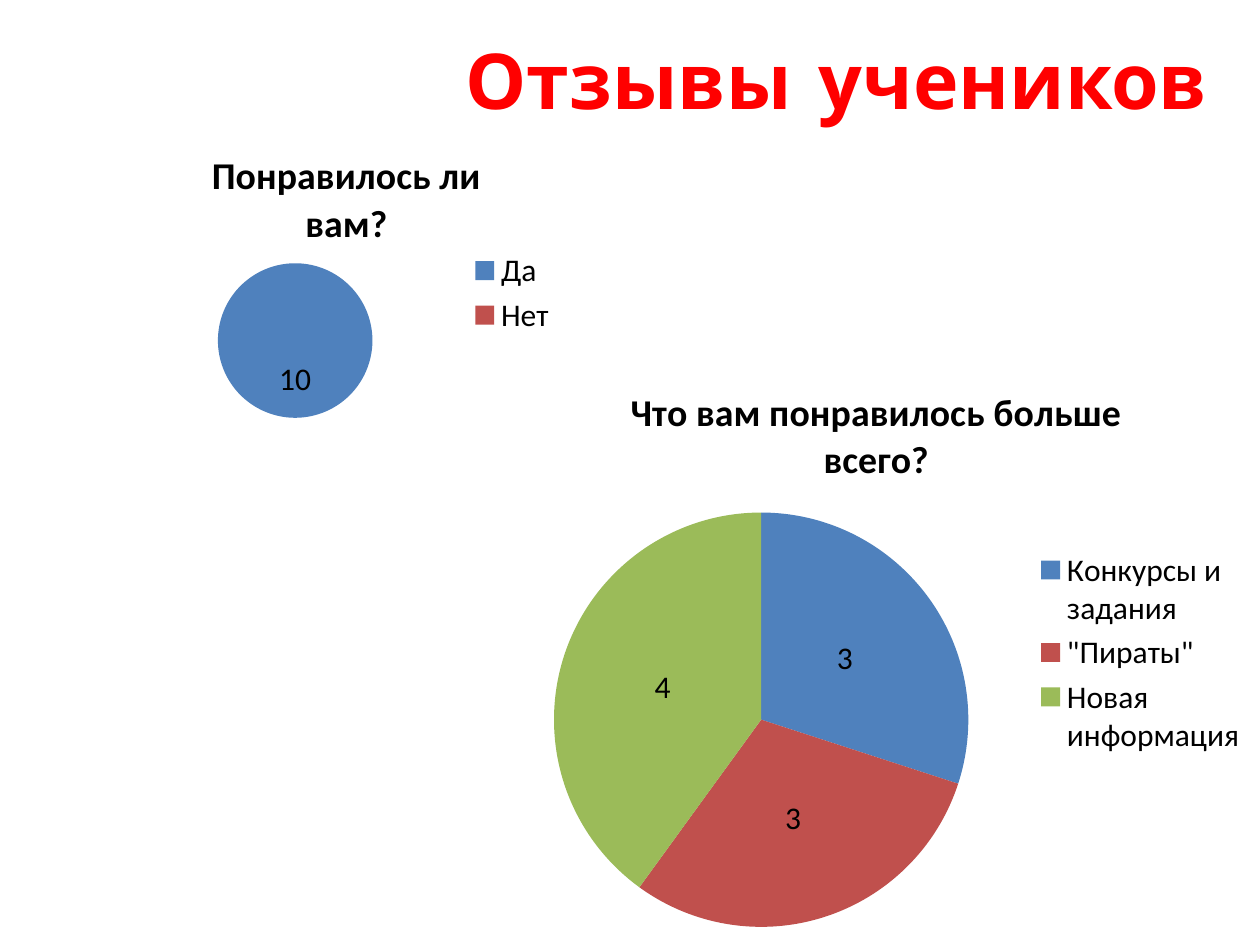
"""Build the slide with pupils' feedback as two pie charts."""
from dataclasses import dataclass

from lxml import etree
from pptx import Presentation
from pptx.chart.data import CategoryChartData
from pptx.dml.color import RGBColor
from pptx.enum.chart import XL_CHART_TYPE, XL_LABEL_POSITION, XL_LEGEND_POSITION
from pptx.enum.text import MSO_ANCHOR, PP_ALIGN
from pptx.oxml import parse_xml
from pptx.oxml.ns import nsdecls, qn
from pptx.util import Cm, Pt

PIE = XL_CHART_TYPE.PIE
CENTER = XL_LABEL_POSITION.CENTER
LEGEND_RIGHT = XL_LEGEND_POSITION.RIGHT
MIDDLE = MSO_ANCHOR.MIDDLE
ALIGN_RIGHT = PP_ALIGN.RIGHT


@dataclass(frozen=True)
class Theme:
    heading_font: str = "Comic Neue"
    chart_font: str = "Calibri"
    heading_size: float = 44
    chart_title_size: float = 21.6
    chart_size: float = 18
    heading: str = "FF0000"
    outline: str = "002060"
    text: str = "000000"
    slices: tuple = ("4F81BD", "C0504D", "9BBB59")


THEME = Theme()
HEADING = "Отзывы учеников"
HEADING_BOX = (2.54, 0, 22.07, 3.18)
CHARTS = [
    {
        "title": "Понравилось ли вам?",
        "series": "Series 1",
        "answers": {"Да": 10, "Нет": 0},
        "box": (2.49, 2.59, 8.99, 6.63),
        "plot": {"x": 0.21, "y": 0.41, "w": 0.35, "h": 0.47},
    },
    {
        "title": "Что вам понравилось больше всего?",
        "series": "Что вам понравилось больше всего?",
        "answers": {"Конкурсы и задания": 3, '"Пираты"': 3, "Новая информация": 4},
        "box": (9.93, 7.26, 15.47, 11.79),
        "plot": {"x": 0.08, "y": 0.26, "w": 0.54, "h": 0.71},
    },
]


def style_font(font, name, size, color, bold=False):
    font.name = name
    font.size = Pt(size)
    font.bold = bold
    font.color.rgb = RGBColor.from_string(color)


def add_heading(slide):
    shape = slide.shapes.title
    shape.left, shape.top, shape.width, shape.height = map(Cm, HEADING_BOX)
    shape.text_frame.text = HEADING
    shape.text_frame.vertical_anchor = MIDDLE
    paragraph = shape.text_frame.paragraphs[0]
    paragraph.alignment = ALIGN_RIGHT
    style_font(paragraph.font, THEME.heading_font, THEME.heading_size, THEME.heading, True)
    outline = parse_xml(
        f'<a:ln {nsdecls("a")} w="{Pt(1)}"><a:solidFill>'
        f'<a:srgbClr val="{THEME.outline}"/></a:solidFill></a:ln>'
    )
    paragraph._p.pPr.find(qn("a:defRPr")).insert(0, outline)


def place_plot(chart, plot):
    area = chart._chartSpace.chart.plotArea
    for layout in area.findall(qn("c:layout")):
        area.remove(layout)
    layout = etree.Element(qn("c:layout"))
    manual = etree.SubElement(layout, qn("c:manualLayout"))
    settings = {"layoutTarget": "inner", "xMode": "edge", "yMode": "edge", **plot}
    for tag, value in settings.items():
        etree.SubElement(manual, qn(f"c:{tag}")).set("val", str(value))
    area.insert(0, layout)


def add_pie(slide, content):
    data = CategoryChartData()
    data.categories = list(content["answers"])
    data.add_series(content["series"], list(content["answers"].values()))
    chart = slide.shapes.add_chart(PIE, *map(Cm, content["box"]), data).chart
    style_font(chart.font, THEME.chart_font, THEME.chart_size, THEME.text)

    chart.has_title = True
    chart.chart_title.include_in_layout = False
    chart.chart_title.text_frame.text = content["title"]
    paragraph = chart.chart_title.text_frame.paragraphs[0]
    style_font(paragraph.font, THEME.chart_font, THEME.chart_title_size, THEME.text, True)

    chart.has_legend = True
    chart.legend.position = LEGEND_RIGHT
    chart.legend.include_in_layout = False

    pie = chart.plots[0]
    pie.vary_by_categories = True
    for index, color in enumerate(THEME.slices[:len(content["answers"])]):
        fill = pie.series[0].points[index].format.fill
        fill.solid()
        fill.fore_color.rgb = RGBColor.from_string(color)
    labels = pie.series[0].data_labels
    labels.show_value = True
    labels.position = CENTER
    labels.number_format = "0;;"
    labels.number_format_is_linked = False
    style_font(labels.font, THEME.chart_font, THEME.chart_size, THEME.text)
    place_plot(chart, content["plot"])


def main():
    presentation = Presentation()
    presentation.slide_width, presentation.slide_height = Cm(25.4), Cm(19.05)
    slide = presentation.slides.add_slide(presentation.slide_layouts[5])
    add_heading(slide)
    for content in CHARTS:
        add_pie(slide, content)
    presentation.save("out.pptx")


if __name__ == "__main__":
    main()
